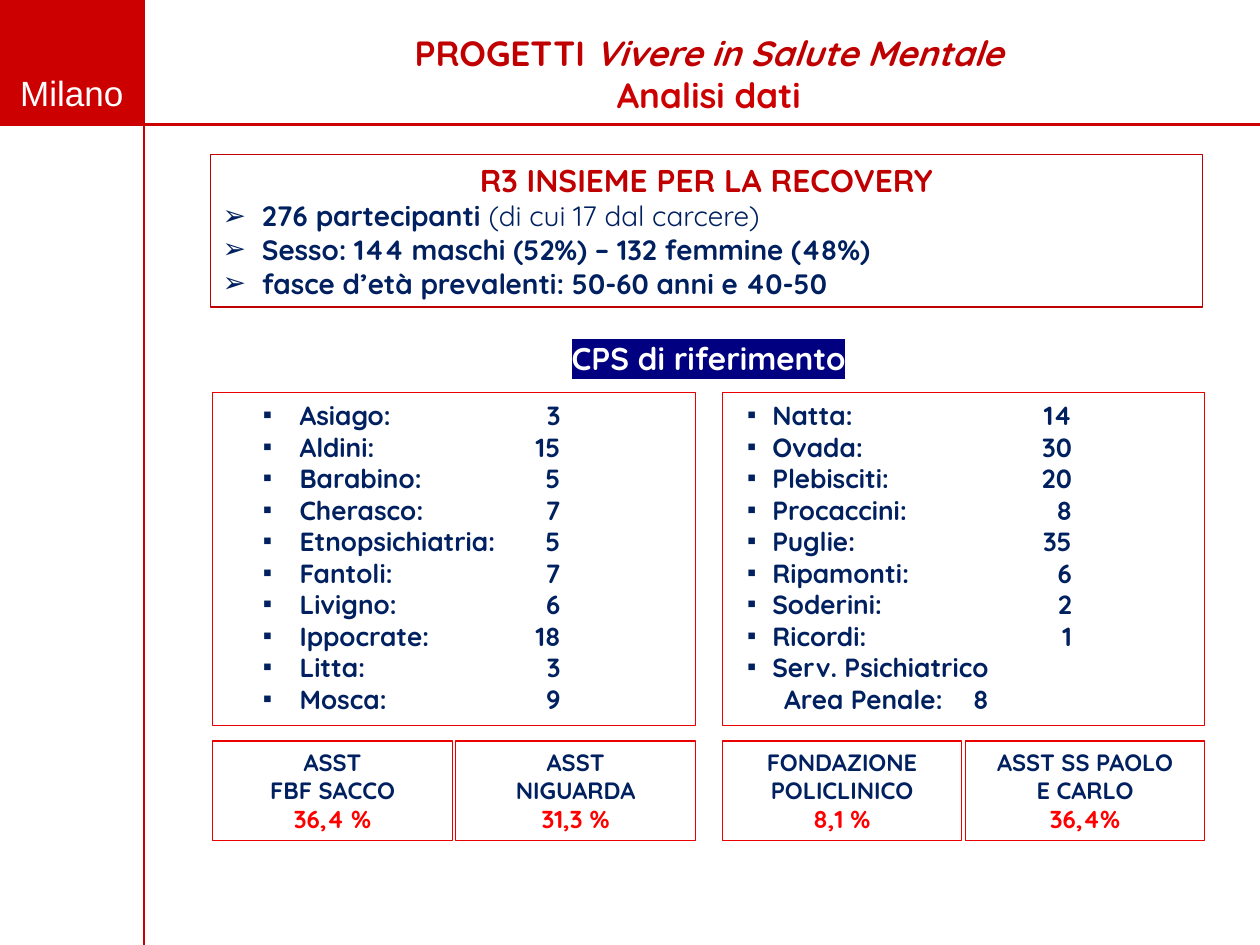
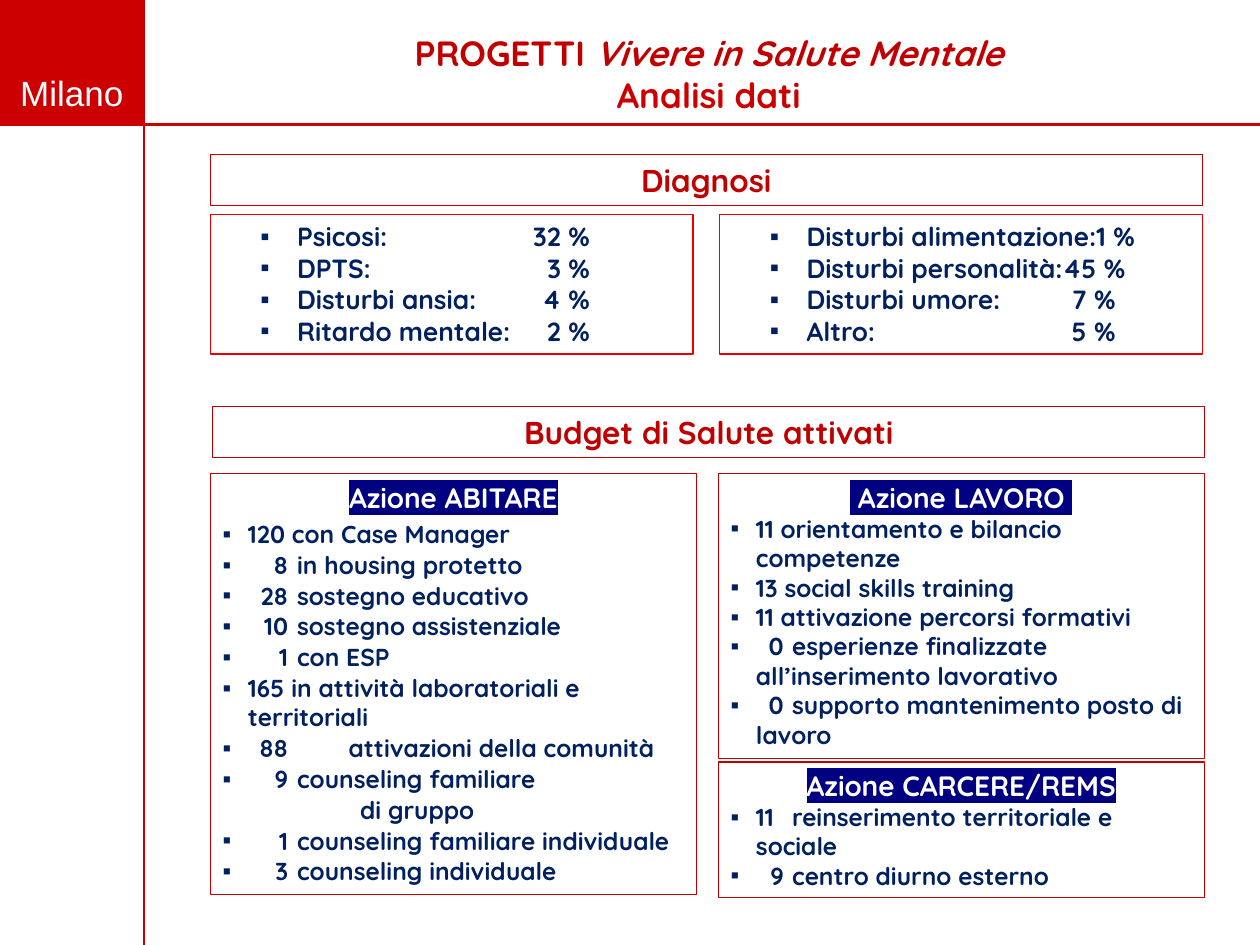
from dataclasses import dataclass

from lxml.etree import SubElement
from pptx import Presentation
from pptx.dml.color import RGBColor as Rgb
from pptx.enum.shapes import MSO_CONNECTOR as Connector, MSO_SHAPE as Shape
from pptx.enum.text import MSO_ANCHOR as Anchor, MSO_AUTO_SIZE as AutoSize, PP_ALIGN as Align
from pptx.oxml.ns import qn
from pptx.util import Cm, Pt

COLOURS = {
    "band": "CC0000", "heading": "C00000", "frame": "EA0000", "share": "FF0000",
    "text": "002060", "label": "000080", "white": "FFFFFF",
}
BASE = {"name": "Quicksand", "bold": True}
TITLE = {**BASE, "size": Pt(20), "colour": "heading"}
HEADING = {**BASE, "size": Pt(18), "colour": "heading"}
FACT = {**BASE, "size": Pt(16), "colour": "text"}
LIST = {**BASE, "size": Pt(15), "colour": "text"}
ACTION = {**BASE, "size": Pt(14), "colour": "text"}
AGENCY = {**BASE, "size": Pt(13.5), "colour": "text"}
SHARE = {**BASE, "size": Pt(14), "colour": "share"}
LABEL = {**BASE, "size": Pt(16), "colour": "white", "highlight": "label"}
CITY = {"name": "Arial", "size": Pt(20), "colour": "white"}
CENTRED = {"alignment": Align.CENTER}
LEFT = {"alignment": Align.LEFT}
FRAME_FORMAT = {
    "word_wrap": True, "auto_size": AutoSize.NONE, "vertical_anchor": Anchor.TOP,
    "margin_left": Cm(0.25), "margin_right": Cm(0.25),
    "margin_top": Cm(0.13), "margin_bottom": Cm(0.13),
}
COLUMN_GAP = 0.54


@dataclass
class Box:
    """A rectangle in centimetres."""
    left: float
    top: float
    width: float
    height: float

    def lengths(self):
        """Return the four lengths for python-pptx."""
        return [Cm(value) for value in (self.left, self.top, self.width, self.height)]

    def columns(self, gap, count=2):
        """Split the box into equal columns."""
        width = (self.width - gap * (count - 1)) / count
        return [Box(self.left + i * (width + gap), self.top, width, self.height) for i in range(count)]

    def rows(self, first, gap):
        """Split the box into a row of the given height and the rest."""
        rest = first + gap
        return (Box(self.left, self.top, self.width, first),
                Box(self.left, self.top + rest, self.width, self.height - rest))


def rgb(colour):
    """Look up a named colour."""
    return Rgb.from_string(COLOURS[colour])


def apply(target, values):
    """Set every attribute from a dict of format values."""
    for name, value in values.items():
        setattr(target, name, value)


def add_run(paragraph, text, style):
    """Add one formatted run."""
    run = paragraph.add_run()
    run.text = text
    apply(run.font, {key: value for key, value in style.items() if key not in ("colour", "highlight")})
    run.font.color.rgb = rgb(style["colour"])
    if "highlight" in style:
        properties = run.font._element
        highlight = SubElement(properties, qn("a:highlight"))
        SubElement(highlight, qn("a:srgbClr"), val=COLOURS[style["highlight"]])
        properties.find(qn("a:solidFill")).addnext(highlight)


def indent(paragraph, margin, hanging, bullet=None, tabs=()):
    """Set the indents, bullet and tab stops of a paragraph."""
    properties = paragraph._p.get_or_add_pPr()
    properties.set("marL", str(Cm(margin)))
    properties.set("indent", str(-Cm(hanging)))
    if bullet:
        SubElement(properties, qn("a:buFont"), typeface="Arial")
        SubElement(properties, qn("a:buChar"), char=bullet)
    else:
        SubElement(properties, qn("a:buNone"))
    if tabs:
        stops = SubElement(properties, qn("a:tabLst"))
        for position, side in tabs:
            SubElement(stops, qn("a:tab"), pos=str(Cm(position)), algn=side)


def add_paragraph(frame, runs, values, **layout):
    """Add a paragraph of (text, style) runs, using the empty first one if free."""
    first = frame.paragraphs[0]
    paragraph = frame.add_paragraph() if first.runs else first
    if layout:
        indent(paragraph, **layout)
    apply(paragraph, values)
    for text, style in runs:
        add_run(paragraph, text, style)


def add_panel(slide, box, line=None, fill=None):
    """Add a rectangle and return its text frame."""
    shape = slide.shapes.add_shape(Shape.RECTANGLE, *box.lengths())
    shape.shadow.inherit = False
    if fill:
        shape.fill.solid()
        shape.fill.fore_color.rgb = rgb(fill)
    else:
        shape.fill.background()
    if line:
        shape.line.color.rgb = rgb(line)
        shape.line.width = Pt(0.75)
    else:
        shape.line.fill.background()
    apply(shape.text_frame, FRAME_FORMAT)
    return shape.text_frame


def add_rule(slide, *ends):
    """Add a red line of the page frame."""
    connector = slide.shapes.add_connector(Connector.STRAIGHT, *map(Cm, ends))
    connector.line.color.rgb = rgb("band")
    connector.line.width = Pt(1.5)
    SubElement(connector._element.spPr, qn("a:effectLst"))


def add_label(slide, box, text, style):
    """Add a centred line of text without a frame."""
    frame = slide.shapes.add_textbox(*box.lengths()).text_frame
    apply(frame, FRAME_FORMAT)
    add_paragraph(frame, [(text, style)], CENTRED)


def add_heading(slide, box, text):
    """Add a framed heading and return its text frame."""
    frame = add_panel(slide, box, "heading")
    add_paragraph(frame, [(text, HEADING)], CENTRED)
    return frame


def add_page(presentation):
    """Add a slide with the red city band, the rules and the title."""
    slide = presentation.slides.add_slide(presentation.slide_layouts[5])
    band = Box(0, 0, 2.9, 2.51)
    add_panel(slide, band, fill="band")
    add_rule(slide, 0, band.height, 25.4, band.height)
    add_rule(slide, band.width, 19.05, band.width, 0)
    add_label(slide, Box(0, 1.32, band.width, 1.1), "Milano", CITY)
    title = slide.shapes.title
    title.left, title.top, title.width, title.height = Box(4.29, 0.51, 20, 1.96).lengths()
    apply(title.text_frame, FRAME_FORMAT)
    add_paragraph(title.text_frame, [("PROGETTI ", TITLE), ("Vivere in Salute Mentale", {**TITLE, "italic": True})], CENTRED)
    add_paragraph(title.text_frame, [("Analisi dati", {**TITLE, "colour": "band"})], CENTRED)
    return slide


def add_recovery(slide, box):
    """Add the framed summary of the participants."""
    frame = add_heading(slide, box, "R3 INSIEME PER LA RECOVERY")
    facts = [
        [("276 partecipanti ", FACT), ("(di cui 17 dal carcere)", {**FACT, "bold": False})],
        [("Sesso: 144 maschi (52%) – 132 femmine (48%)", FACT)],
        [("fasce d’età prevalenti: 50-60 anni e 40-50", FACT)],
    ]
    for runs in facts:
        add_paragraph(frame, runs, LEFT, margin=0.79, hanging=0.79, bullet="➢")


def add_values(slide, box, entries, margin, hanging, stop):
    """Add a framed list of names with right-aligned values and return its text frame."""
    frame = add_panel(slide, box, "frame")
    for entry in entries:
        add_paragraph(frame, [("\t".join(entry), LIST)], LEFT,
                      margin=margin, hanging=hanging, bullet="▪", tabs=[(stop, "r")])
    return frame


def add_centres(slide, box):
    """Add the two lists of reference centres."""
    left, right = box.columns(COLUMN_GAP)
    add_values(slide, left, [
        ("Asiago:", "3"), ("Aldini:", "15"), ("Barabino:", "5"), ("Cherasco:", "7"),
        ("Etnopsichiatria:", "5"), ("Fantoli:", "7"), ("Livigno:", "6"),
        ("Ippocrate:", "18"), ("Litta:", "3"), ("Mosca:", "9"),
    ], 1.5, 0.74, 6.76)
    frame = add_values(slide, right, [
        ("Natta:", "14"), ("Ovada:", "30"), ("Plebisciti:", "20"), ("Procaccini:", "8"),
        ("Puglie:", "35"), ("Ripamonti:", "6"), ("Soderini:", "2"), ("Ricordi:", "1"),
        ("Serv. Psichiatrico",),
    ], 0.76, 0.51, 6.8)
    add_paragraph(frame, [("Area Penale:\t8", LIST)], LEFT, margin=1, hanging=0, tabs=[(7.05, "r")])


def add_agencies(slide, box):
    """Add the four agencies with their shares."""
    agencies = [
        ("ASST", "FBF SACCO", "36,4 %"), ("ASST", "NIGUARDA", "31,3 %"),
        ("FONDAZIONE", "POLICLINICO", "8,1 %"), ("ASST SS PAOLO", "E CARLO", "36,4%"),
    ]
    cells = [cell for half in box.columns(COLUMN_GAP) for cell in half.columns(0.07)]
    for cell, lines in zip(cells, agencies):
        frame = add_panel(slide, cell, "frame")
        for text, style in zip(lines, (AGENCY, AGENCY, SHARE)):
            add_paragraph(frame, [(text, style)], CENTRED)


def add_diagnoses(slide, box):
    """Add the two lists of diagnoses."""
    left, right = box.columns(COLUMN_GAP)
    add_values(slide, left, [
        ("Psicosi:", "32 %"), ("DPTS:", "3 %"), ("Disturbi ansia:", "4 %"), ("Ritardo mentale:", "2 %"),
    ], 1.5, 0.74, 7.4)
    add_values(slide, right, [
        ("Disturbi alimentazione:", "1 %"), ("Disturbi personalità:", "45 %"),
        ("Disturbi umore:", "7 %"), ("Altro:", "5 %"),
    ], 1.5, 0.74, 8.62)


def add_action(slide, box, label, items, number_stop, text_stop, values=LEFT, label_values=CENTRED):
    """Add a framed action; items that start with a tab have a right-aligned number."""
    frame = add_panel(slide, box, "heading")
    add_paragraph(frame, [(label, LABEL)], label_values)
    for text in items:
        tabs = [(number_stop, "r")] if text.startswith("\t") else []
        add_paragraph(frame, [(text, ACTION)], values, margin=0.51, hanging=0.51,
                      bullet="▪", tabs=tabs + [(text_stop, "l")])
    return frame


def add_actions(slide, box):
    """Add the three panels of activated health budgets."""
    left, right = box.columns(0.44)
    left.height -= 0.07
    work, prison = right.rows(5.74, 0.07)
    spaced = {**LEFT, "space_after": Pt(0.8)}
    frame = add_action(slide, left, "Azione ABITARE", [
        "120 con Case Manager", "\t8\tin housing protetto", "\t28\tsostegno educativo",
        "\t10\tsostegno assistenziale", "\t1\tcon ESP",
        "165 in attività laboratoriali e territoriali", "\t88\tattivazioni della comunità",
        "\t9\tcounseling familiare", "di gruppo",
        "\t1\tcounseling familiare individuale", "\t3\tcounseling individuale",
    ], 1.32, 1.5, spaced, {**CENTRED, "space_after": Pt(3)})
    for paragraph in frame.paragraphs:
        properties = paragraph._p.pPr
        if paragraph.text == "di gruppo":
            properties.set("marL", str(Cm(2.77)))
            properties.set("indent", "0")
            properties.remove(properties.find(qn("a:buChar")))
        elif "attivazioni" in paragraph.text:
            properties.find(qn("a:tabLst"))[-1].set("pos", str(Cm(2.54)))
    add_action(slide, work, " Azione LAVORO ", [
        "11 orientamento e bilancio competenze", "13 social skills training",
        "11 attivazione percorsi formativi", "\t0\tesperienze finalizzate all’inserimento lavorativo",
        "\t0\tsupporto mantenimento posto di lavoro",
    ], 1.07, 1.24)
    add_action(slide, prison, "Azione CARCERE/REMS", [
        "11\treinserimento territoriale e sociale", "\t9\tcentro diurno esterno",
    ], 1.07, 1.24)


def main():
    """Build and save the two slides."""
    presentation = Presentation()
    presentation.slide_width, presentation.slide_height = Cm(25.4), Cm(19.05)

    centres = add_page(presentation)
    add_recovery(centres, Box(4.24, 3.12, 20, 3.07))
    add_label(centres, Box(7.92, 6.71, 12.73, 1.02), "CPS di riferimento", {**LABEL, "size": Pt(18)})
    add_centres(centres, Box(4.29, 7.92, 20, 6.7))
    add_agencies(centres, Box(4.29, 14.94, 20, 2.01))

    budgets = add_page(presentation)
    add_heading(budgets, Box(4.24, 3.12, 20, 1.02), "Diagnosi")
    add_diagnoses(budgets, Box(4.24, 4.32, 20, 2.82))
    add_heading(budgets, Box(4.29, 8.2, 20, 1.02), "Budget di Salute attivati")
    add_actions(budgets, Box(4.24, 9.55, 20.04, 8.55))

    presentation.save("out.pptx")


if __name__ == "__main__":
    main()
